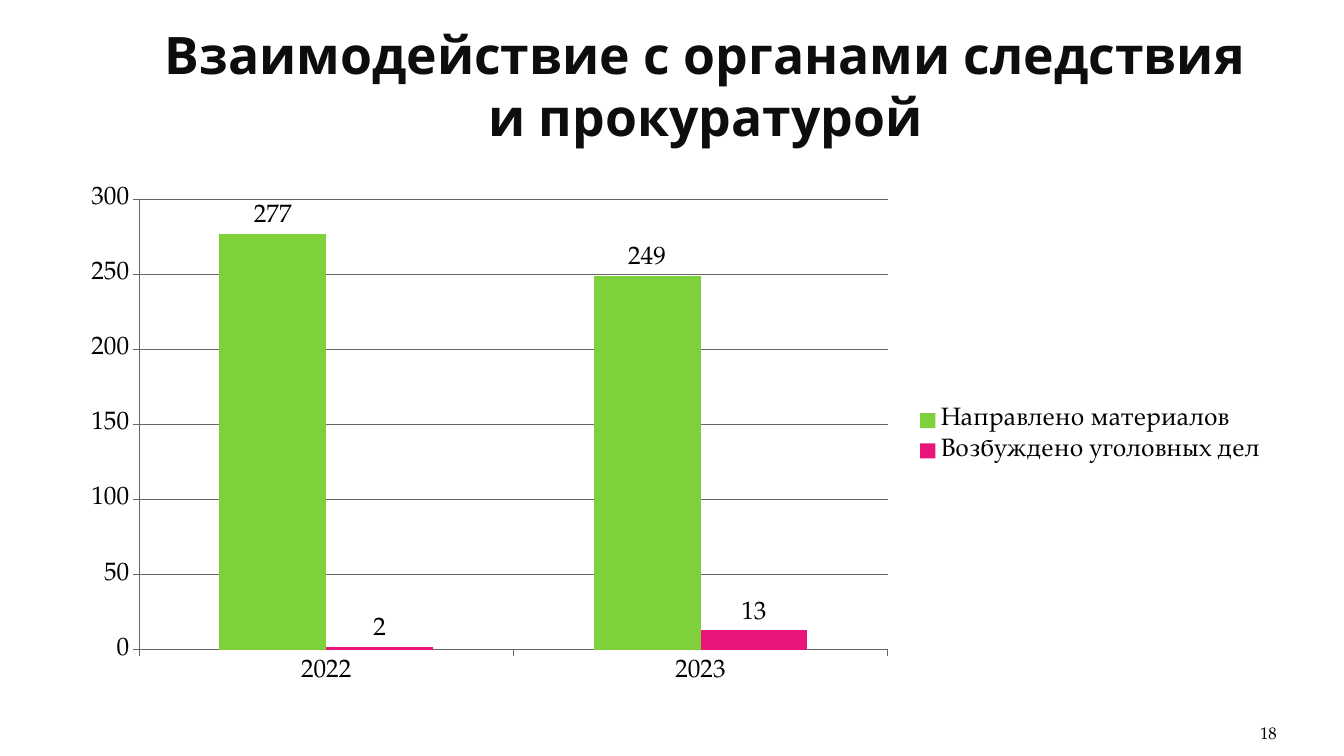
import pptx
import pptx.util
import pptx.dml.color
import pptx.chart.data
import pptx.enum.chart
import pptx.enum.text

WIDTH, HEIGHT = 13.33, 7.5
SERIF = "TeX Gyre Pagella"
CATEGORIES = ["2022", "2023"]
SERIES = [
    ("Направлено материалов", [277, 249], "7FD13B"),
    ("Возбуждено уголовных дел", [2, 13], "EA157A"),
]


def rgb(value):
    return pptx.dml.color.RGBColor.from_string(value)


def place(x, y, w, h):
    """Turn shares of the slide's size into lengths."""
    return [pptx.util.Inches(share * size)
            for share, size in zip((x, y, w, h), (WIDTH, HEIGHT) * 2)]


def style(font, name, size, color, bold=False):
    font.name = name
    font.size = pptx.util.Pt(size)
    font.bold = bold
    font.color.rgb = rgb(color)


def add_text(s, box, text, align, anchor, side_inset, **font):
    tf = s.shapes.add_textbox(*place(*box)).text_frame
    tf.word_wrap = True
    tf.vertical_anchor = anchor
    tf.margin_left = tf.margin_right = pptx.util.Inches(side_inset)
    p = tf.paragraphs[0]
    p.text = text
    p.alignment = align
    style(p.runs[0].font, **font)


def add_cases_chart(s, box):
    data = pptx.chart.data.CategoryChartData()
    data.categories = CATEGORIES
    for name, values, _ in SERIES:
        data.add_series(name, values)
    kind = pptx.enum.chart.XL_CHART_TYPE.COLUMN_CLUSTERED
    chart = s.shapes.add_chart(kind, *place(*box), data).chart
    style(chart.font, SERIF, 18, "000000")
    chart.has_title = False

    # Legend
    chart.has_legend = True
    chart.legend.position = pptx.enum.chart.XL_LEGEND_POSITION.RIGHT
    chart.legend.include_in_layout = False

    # Axes and gridlines
    values_axis = chart.value_axis
    values_axis.minimum_scale = 0
    values_axis.maximum_scale = 300
    values_axis.major_unit = 50
    values_axis.has_major_gridlines = True
    for axis in (chart.category_axis, values_axis):
        axis.major_tick_mark = pptx.enum.chart.XL_TICK_MARK.OUTSIDE
    for part in (chart.category_axis, values_axis, values_axis.major_gridlines):
        part.format.line.color.rgb = rgb("666666")
        part.format.line.width = pptx.util.Pt(0.75)

    # Columns and their values
    plot = chart.plots[0]
    plot.gap_width = 150
    plot.overlap = 0
    plot.vary_by_categories = False
    for series, (_, _, color) in zip(plot.series, SERIES):
        series.format.fill.solid()
        series.format.fill.fore_color.rgb = rgb(color)
        labels = series.data_labels
        labels.show_value = True
        labels.position = pptx.enum.chart.XL_LABEL_POSITION.OUTSIDE_END
        style(labels.font, SERIF, 18, "000000")


def main():
    prs = pptx.Presentation()
    prs.slide_width = pptx.util.Inches(WIDTH)
    prs.slide_height = pptx.util.Inches(HEIGHT)
    s = prs.slides.add_slide(prs.slide_layouts[6])
    align = pptx.enum.text.PP_ALIGN
    anchor = pptx.enum.text.MSO_ANCHOR

    # Title
    add_text(s, (0.1, 0.028, 0.85, 0.168),
             "Взаимодействие с органами следствия и прокуратурой",
             align.CENTER, anchor.MIDDLE, 0.1,
             name="Open Sans", size=36.9, color="0D0D0D", bold=True)

    # Chart
    add_cases_chart(s, (0.05, 0.233, 0.9, 0.687))

    # Page number
    add_text(s, (0.867, 0.936, 0.083, 0.053), "18",
             align.RIGHT, anchor.BOTTOM, 0,
             name=SERIF, size=12, color="000000")

    prs.save("out.pptx")


if __name__ == "__main__":
    main()
